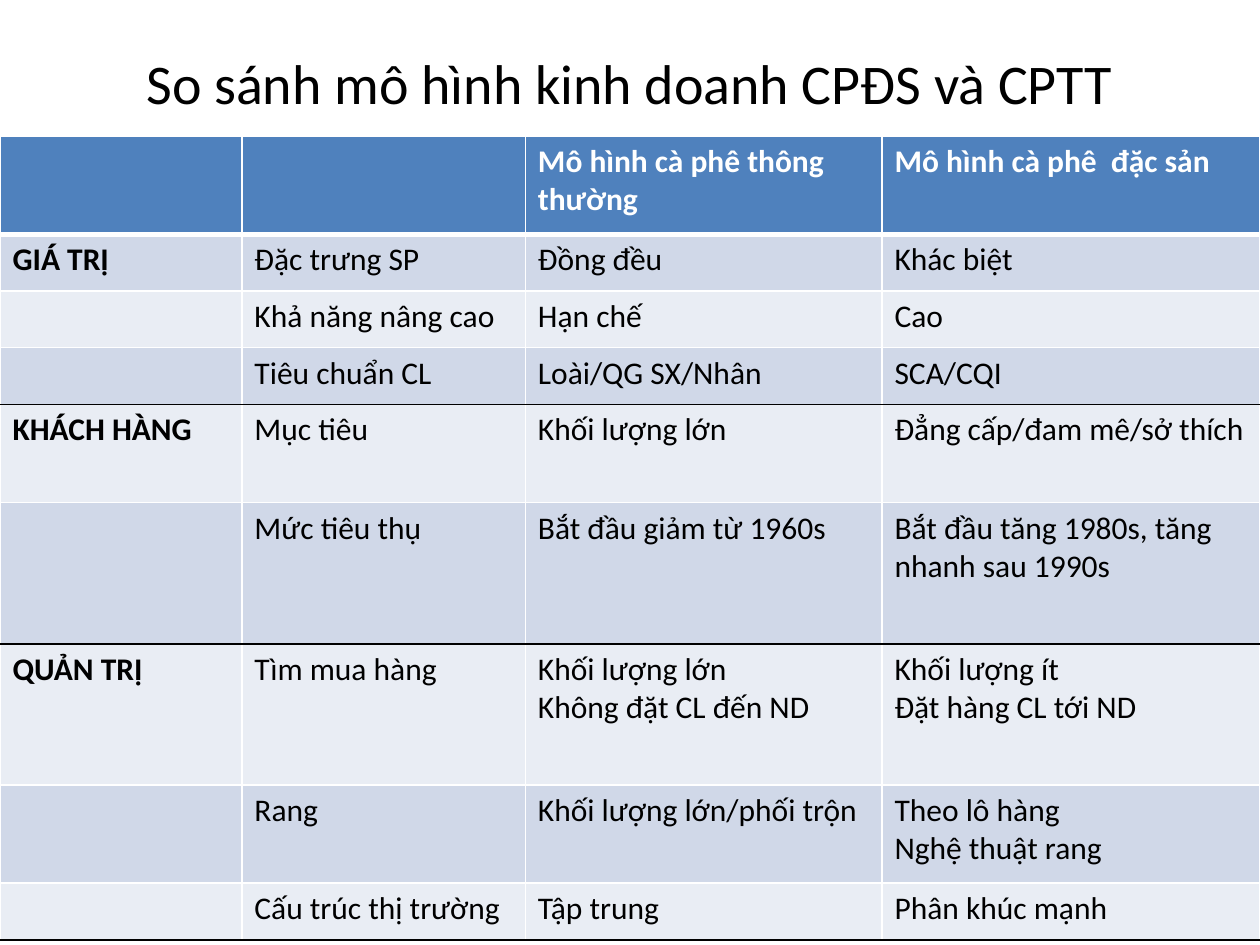
from lxml.etree import SubElement
from pptx import Presentation
from pptx.dml.color import RGBColor
from pptx.enum.text import MSO_ANCHOR, PP_ALIGN
from pptx.oxml.ns import qn
from pptx.util import Inches, Pt

FONT = "Calibri"
WHITE, BLACK, BLUE = "FFFFFF", "000000", "4F81BD"
BANDS = ["E9EDF4", "D0D8E8"]
COL_WIDTHS = [1.92, 2.25, 2.83, 3]
ROW_HEIGHTS = [0.78, 0.45, 0.45, 0.45, 0.78, 1.12, 1.12, 0.78, 0.45]
SECTION_ENDS = {3, 5, 8}
ROWS = [
    ["", "", "Mô hình cà phê thông thường", "Mô hình cà phê  đặc sản"],
    ["GIÁ TRỊ", "Đặc trưng SP", "Đồng đều", "Khác biệt"],
    ["", "Khả năng nâng cao", "Hạn chế", "Cao"],
    ["", "Tiêu chuẩn CL", "Loài/QG SX/Nhân", "SCA/CQI"],
    ["KHÁCH HÀNG", "Mục tiêu", "Khối lượng lớn", "Đẳng cấp/đam mê/sở thích"],
    ["", "Mức tiêu thụ", "Bắt đầu giảm từ 1960s",
     "Bắt đầu tăng 1980s, tăng nhanh sau 1990s"],
    ["QUẢN TRỊ", "Tìm mua hàng", "Khối lượng lớn\nKhông đặt CL đến ND",
     "Khối lượng ít\nĐặt hàng CL tới ND"],
    ["", "Rang", "Khối lượng lớn/phối trộn", "Theo lô hàng\nNghệ thuật rang"],
    ["", "Cấu trúc thị trường", "Tập trung", "Phân khúc mạnh"],
]


def rgb(color):
    return RGBColor.from_string(color)


def format_text(tf, size, color, bold=False):
    for p in tf.paragraphs:
        p.font.size = Pt(size)
        for r in p.runs:
            r.font.name = FONT
            r.font.size = Pt(size)
            r.font.bold = bold
            r.font.color.rgb = rgb(color)


def set_border(cell, side, color, width):
    ln = SubElement(cell._tc.get_or_add_tcPr(), qn(f"a:ln{side}"), w=str(Pt(width)))
    fill = SubElement(ln, qn("a:solidFill"))
    SubElement(fill, qn("a:srgbClr"), val=color)


def row_line(row):
    if row == 0:
        return WHITE, 3
    return (BLACK if row in SECTION_ENDS else WHITE), 1


def add_title(s, text):
    sp = s.shapes.title
    sp.left, sp.top, sp.width, sp.height = map(Inches, (0.5, 0.3, 9, 0.7))
    tf = sp.text_frame
    tf.text = text
    tf.word_wrap = True
    tf.vertical_anchor = MSO_ANCHOR.MIDDLE
    tf.paragraphs[0].alignment = PP_ALIGN.CENTER
    format_text(tf, 32, BLACK)


def format_cell(cell, row, col):
    set_border(cell, "L", WHITE, 1)
    set_border(cell, "R", WHITE, 1)
    set_border(cell, "T", *(row_line(row - 1) if row else (WHITE, 1)))
    set_border(cell, "B", *row_line(row))
    cell.fill.solid()
    cell.fill.fore_color.rgb = rgb(BANDS[row % 2] if row else BLUE)
    cell.text_frame.text = ROWS[row][col]
    format_text(cell.text_frame, 18, BLACK if row else WHITE, row == 0 or col == 0)


def add_comparison_table(s):
    frame = s.shapes.add_table(len(ROWS), len(COL_WIDTHS), Inches(0), Inches(1.08),
                               Inches(sum(COL_WIDTHS)), Inches(sum(ROW_HEIGHTS)))
    table = frame.table
    for column, width in zip(table.columns, COL_WIDTHS):
        column.width = Inches(width)
    for row, height in enumerate(ROW_HEIGHTS):
        table.rows[row].height = Inches(height)
        for col in range(len(COL_WIDTHS)):
            format_cell(table.cell(row, col), row, col)


def main():
    prs = Presentation()
    prs.slide_width, prs.slide_height = Inches(10), Inches(7.5)
    s = prs.slides.add_slide(prs.slide_layouts[5])
    add_title(s, "So sánh mô hình kinh doanh CPĐS và CPTT")
    add_comparison_table(s)
    prs.save("out.pptx")


if __name__ == "__main__":
    main()
